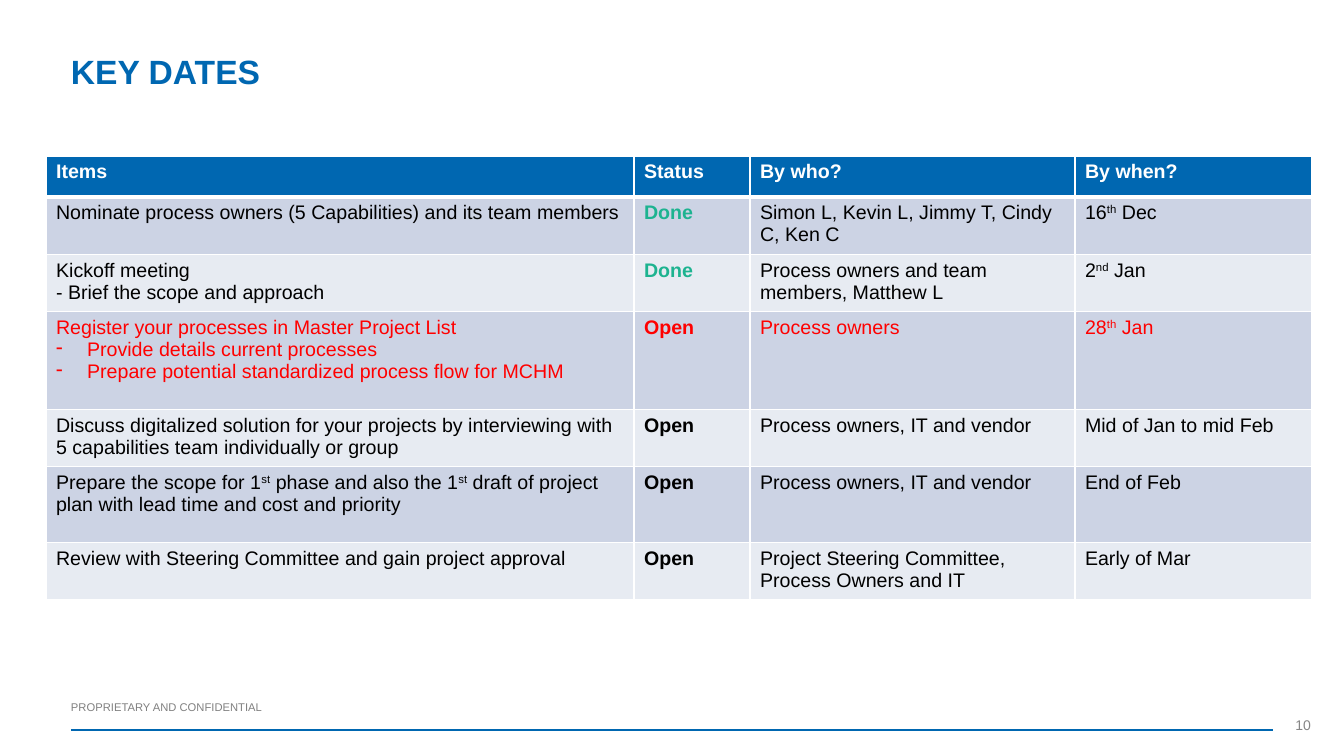
from lxml import etree
from pptx import Presentation
from pptx.dml.color import RGBColor
from pptx.enum.shapes import MSO_CONNECTOR
from pptx.enum.text import MSO_ANCHOR, PP_ALIGN
from pptx.oxml.ns import qn
from pptx.util import Emu, Pt

EMU_PER_PX = 914400 / 100.8
STRAIGHT = MSO_CONNECTOR.STRAIGHT
MIDDLE, BOTTOM = MSO_ANCHOR.MIDDLE, MSO_ANCHOR.BOTTOM
LEFT, RIGHT = PP_ALIGN.LEFT, PP_ALIGN.RIGHT
FONT = "Arial"
BULLET_MARK = "* "
SUPERSCRIPT_MARK = "^"
COLORS = {
    "blue": "0067B1",
    "white": "FFFFFF",
    "black": "000000",
    "red": "FF0000",
    "green": "1DB390",
    "footer": "808080",
    "number": "868686",
    "dark_band": "CCD3E4",
    "light_band": "E7EBF2",
}
HEADINGS = ["Items", "Status", "By who?", "By when?"]
COLUMN_WIDTHS = [588, 116, 325, 237]
HEADER_HEIGHT = 41
KEY_DATES = [
    (54, "black", "Nominate process owners (5 Capabilities) and its team members",
     "Done", "Simon L, Kevin L, Jimmy T, Cindy C, Ken C", "16^th^ Dec"),
    (54, "black", "Kickoff meeting\n- Brief the scope and approach",
     "Done", "Process owners and team members, Matthew L", "2^nd^ Jan"),
    (98, "red", "Register your processes in Master Project List\n"
     "* Provide details current processes\n"
     "* Prepare potential standardized process flow for MCHM",
     "Open", "Process owners", "28^th^ Jan"),
    (54, "black", "Discuss digitalized solution for your projects by interviewing "
     "with 5 capabilities team individually or group",
     "Open", "Process owners, IT and vendor", "Mid of Jan to mid Feb"),
    (76, "black", "Prepare the scope for 1^st^ phase and also the 1^st^ draft of "
     "project plan with lead time and cost and priority",
     "Open", "Process owners, IT and vendor", "End of Feb"),
    (54, "black", "Review with Steering Committee and gain project approval",
     "Open", "Project Steering Committee, Process Owners and IT", "Early of Mar"),
]


def px(length):
    return Emu(round(length * EMU_PER_PX))


def rgb(name):
    return RGBColor.from_string(COLORS[name])


def add_runs(paragraph, text, size, color, bold):
    for index, part in enumerate(text.split(SUPERSCRIPT_MARK)):
        run = paragraph.add_run()
        run.text = part
        run.font.name = FONT
        run.font.size = Pt(size)
        run.font.bold = bold
        run.font.color.rgb = rgb(color)
        if index % 2:
            run.font._element.set("baseline", "30000")


def add_dash_bullet(paragraph):
    properties = paragraph._p.get_or_add_pPr()
    properties.set("marL", str(px(31)))
    properties.set("indent", str(-px(31)))
    etree.SubElement(properties, qn("a:buChar")).set("char", "-")


def add_text(slide, box, text, size, color, bold=False, anchor=BOTTOM, align=LEFT):
    shape = slide.shapes.add_textbox(*map(px, box))
    frame = shape.text_frame
    frame.word_wrap = True
    frame.vertical_anchor = anchor
    frame.margin_left = frame.margin_right = 0
    frame.margin_top = frame.margin_bottom = 0
    paragraph = frame.paragraphs[0]
    paragraph.alignment = align
    add_runs(paragraph, text, size, color, bold)
    return paragraph


def add_rule(slide, left, right, y):
    rule = slide.shapes.add_connector(STRAIGHT, px(left), px(y), px(right), px(y))
    rule.line.color.rgb = rgb("blue")
    rule.line.width = Pt(1)
    etree.SubElement(rule._element.spPr, qn("a:effectLst"))


def set_borders(cell, top, bottom):
    properties = cell._tc.get_or_add_tcPr()
    for side, width in (("L", 1), ("R", 1), ("T", top), ("B", bottom)):
        border = etree.SubElement(properties, qn(f"a:ln{side}"))
        border.set("w", str(Pt(width)))
        fill = etree.SubElement(border, qn("a:solidFill"))
        etree.SubElement(fill, qn("a:srgbClr")).set("val", COLORS["white"])


def fill_cell(cell, text, color, bold, fill, top=1, bottom=1):
    set_borders(cell, top, bottom)
    cell.fill.solid()
    cell.fill.fore_color.rgb = rgb(fill)
    frame = cell.text_frame
    for index, line in enumerate(text.split("\n")):
        paragraph = frame.add_paragraph() if index else frame.paragraphs[0]
        if line.startswith(BULLET_MARK):
            add_dash_bullet(paragraph)
        add_runs(paragraph, line.removeprefix(BULLET_MARK), 14, color, bold)


def add_key_dates_table(slide, left, top):
    heights = [HEADER_HEIGHT] + [entry[0] for entry in KEY_DATES]
    frame = slide.shapes.add_table(
        len(heights), len(HEADINGS), px(left), px(top),
        px(sum(COLUMN_WIDTHS)), px(sum(heights)))
    table = frame.table
    table.horz_banding = False
    for column, width in zip(table.columns, COLUMN_WIDTHS):
        column.width = px(width)
    for row, height in zip(table.rows, heights):
        row.height = px(height)
    for column, heading in enumerate(HEADINGS):
        fill_cell(table.cell(0, column), heading, "white", True, "blue", bottom=3)
    for row, (_, color, *texts) in enumerate(KEY_DATES, start=1):
        band = "dark_band" if row % 2 else "light_band"
        for column, text in enumerate(texts):
            fill_cell(table.cell(row, column), text,
                      "green" if text == "Done" else color,
                      HEADINGS[column] == "Status", band,
                      top=3 if row == 1 else 1)


def main():
    presentation = Presentation()
    presentation.slide_width = px(1344)
    presentation.slide_height = px(756)
    slide = presentation.slides.add_slide(presentation.slide_layouts[6])
    add_text(slide, (71, 701, 1101, 13), "PROPRIETARY AND CONFIDENTIAL", 8, "footer")
    add_rule(slide, 71, 1273, 730)
    title = add_text(slide, (71, 35, 990, 77), "KEY DATES", 24, "blue",
                     bold=True, anchor=MIDDLE)
    title.line_spacing = 0.9
    add_text(slide, (1284, 714, 27, 19), "10", 10, "number", align=RIGHT)
    add_key_dates_table(slide, 46, 156)
    presentation.save("out.pptx")


if __name__ == "__main__":
    main()
